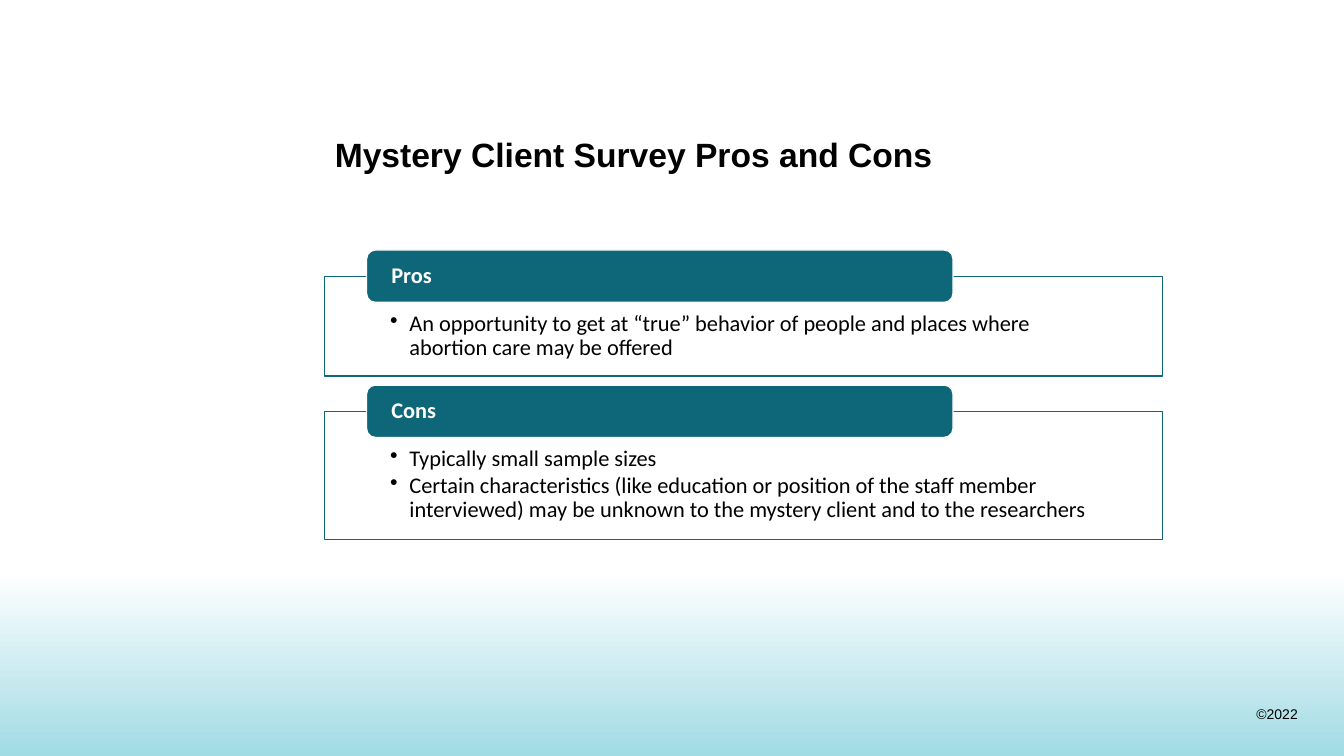
from dataclasses import dataclass

from lxml.etree import SubElement
from pptx import Presentation
from pptx.dml.color import RGBColor
from pptx.enum.shapes import MSO_SHAPE
from pptx.enum.text import MSO_ANCHOR, MSO_AUTO_SIZE, PP_ALIGN
from pptx.oxml.ns import qn
from pptx.util import Inches, Pt

TITLE = "Mystery Client Survey Pros and Cons"
COPYRIGHT = "©2022"
# heading, panel top, panel height, points
SECTIONS = [
    ("Pros", 2.74, 0.99, [
        "An opportunity to get at “true” behavior of people and places where "
        "abortion care may be offered",
    ]),
    ("Cons", 4.08, 1.27, [
        "Typically small sample sizes",
        "Certain characteristics (like education or position of the staff member "
        "interviewed) may be unknown to the mystery client and to the researchers",
    ]),
]


@dataclass(frozen=True)
class Theme:
    teal: RGBColor = RGBColor(0x0E, 0x67, 0x79)
    aqua: RGBColor = RGBColor(0xA1, 0xDB, 0xE4)
    white: RGBColor = RGBColor(0xFF, 0xFF, 0xFF)
    black: RGBColor = RGBColor(0, 0, 0)
    heading_font: str = "Arial"
    body_font: str = "Calibri"
    title_size: int = 24
    body_size: int = 16
    note_size: int = 10


THEME = Theme()
WIDTH, HEIGHT = 13.33, 7.5
LEFT, CONTENT_WIDTH = 3.22, 8.31
TAB_LEFT = LEFT + 0.05 * CONTENT_WIDTH
TAB_WIDTH, TAB_HEIGHT = 0.7 * CONTENT_WIDTH, 0.52
INDENT = 0.19


def add_span(para, text, font, size, color, bold=False):
    span = para.add_run()
    span.text = text
    span.font.name = font
    span.font.size = Pt(size)
    span.font.color.rgb = color
    span.font.bold = bold


def set_insets(frame, left, top, right, bottom):
    frame.margin_left, frame.margin_top = Inches(left), Inches(top)
    frame.margin_right, frame.margin_bottom = Inches(right), Inches(bottom)


def add_box(page, kind, left, top, width, height, fill, line):
    box = page.shapes.add_shape(
        kind, Inches(left), Inches(top), Inches(width), Inches(height))
    box.shadow.inherit = False
    box.fill.solid()
    box.fill.fore_color.rgb = fill
    box.line.color.rgb = line
    box.line.width = Pt(1)
    box.text_frame.word_wrap = True
    return box


def add_bullet(para):
    props = para._p.get_or_add_pPr()
    props.set("marL", str(Inches(INDENT)))
    props.set("indent", str(-Inches(INDENT)))
    SubElement(props, qn("a:buChar")).set("char", "•")


def add_background(page):
    band = add_box(page, MSO_SHAPE.RECTANGLE, 0, 5.67, WIDTH, HEIGHT - 5.67,
                   THEME.white, THEME.white)
    band.line.fill.background()
    band.fill.gradient()
    band.fill.gradient_angle = 270
    for stop, color in zip(band.fill.gradient_stops, (THEME.white, THEME.aqua)):
        stop.color.rgb = color

    note = page.shapes.add_textbox(
        Inches(12.36), Inches(6.95), Inches(0.61), Inches(0.27))
    note.text_frame.word_wrap = False
    note.text_frame.auto_size = MSO_AUTO_SIZE.SHAPE_TO_FIT_TEXT
    para = note.text_frame.paragraphs[0]
    para.alignment = PP_ALIGN.RIGHT
    add_span(para, COPYRIGHT, THEME.heading_font, THEME.note_size, THEME.black)


def add_title(page):
    title = page.shapes.title
    title.left, title.top = Inches(LEFT), Inches(1.28)
    title.width, title.height = Inches(CONTENT_WIDTH), Inches(0.72)
    frame = title.text_frame
    frame.vertical_anchor = MSO_ANCHOR.TOP
    frame.auto_size = MSO_AUTO_SIZE.NONE
    para = frame.paragraphs[0]
    para.alignment = PP_ALIGN.LEFT
    add_span(para, TITLE, THEME.heading_font, THEME.title_size, THEME.black, True)


def add_section(page, heading, top, height, points):
    panel = add_box(page, MSO_SHAPE.RECTANGLE, LEFT, top, CONTENT_WIDTH, height,
                    THEME.white, THEME.teal)
    frame = panel.text_frame
    frame.vertical_anchor = MSO_ANCHOR.TOP
    set_insets(frame, 0.65, 0.36, 0.65, 0.12)
    for index, point in enumerate(points):
        para = frame.add_paragraph() if index else frame.paragraphs[0]
        add_bullet(para)
        para.alignment = PP_ALIGN.LEFT
        para.line_spacing = 0.9
        para.space_after = Pt(2)
        add_span(para, point, THEME.body_font, THEME.body_size, THEME.black)

    tab = add_box(page, MSO_SHAPE.ROUNDED_RECTANGLE, TAB_LEFT, top - TAB_HEIGHT / 2,
                  TAB_WIDTH, TAB_HEIGHT, THEME.teal, THEME.white)
    tab.text_frame.vertical_anchor = MSO_ANCHOR.MIDDLE
    set_insets(tab.text_frame, 0.22, 0, 0.22, 0)
    para = tab.text_frame.paragraphs[0]
    para.alignment = PP_ALIGN.LEFT
    para.line_spacing = 0.9
    add_span(para, heading, THEME.body_font, THEME.body_size, THEME.white, True)


def main():
    deck = Presentation()
    deck.slide_width, deck.slide_height = Inches(WIDTH), Inches(HEIGHT)
    page = deck.slides.add_slide(deck.slide_layouts[5])
    add_background(page)
    add_title(page)
    for section in SECTIONS:
        add_section(page, *section)
    deck.save("out.pptx")


if __name__ == "__main__":
    main()
